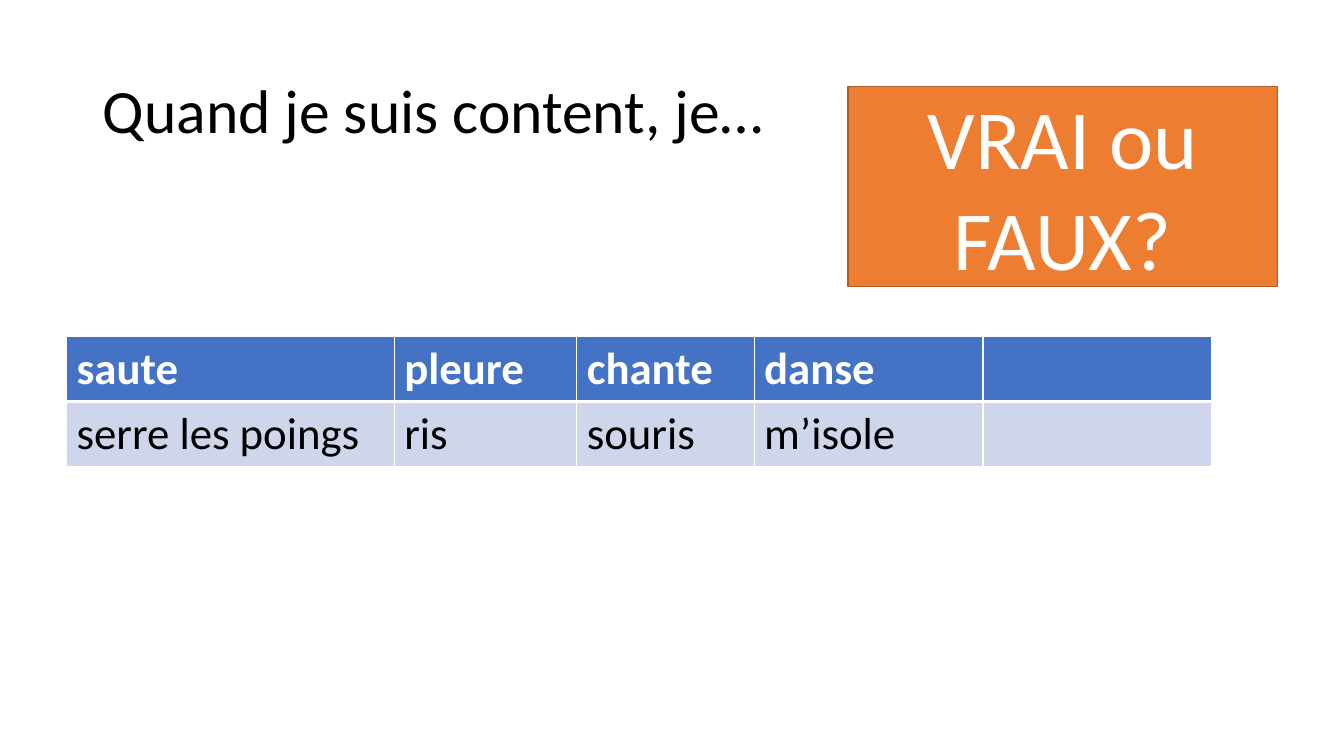
from lxml.etree import SubElement
from pptx import Presentation
from pptx.dml.color import RGBColor
from pptx.enum.shapes import MSO_SHAPE
from pptx.enum.text import MSO_ANCHOR, PP_ALIGN
from pptx.oxml import parse_xml
from pptx.oxml.ns import nsdecls, qn
from pptx.util import Inches, Pt

WHITE = RGBColor(0xFF, 0xFF, 0xFF)
BLACK = RGBColor(0x00, 0x00, 0x00)
BLUE = RGBColor(0x44, 0x72, 0xC4)
PALE = RGBColor(0xCF, 0xD5, 0xEA)
ORANGE = RGBColor(0xED, 0x7D, 0x31)
BROWN = RGBColor(0xAF, 0x5C, 0x24)

WIDTHS = [3.25, 1.81, 1.76, 2.27, 2.27]
VERBS = [
    ["saute", "pleure", "chante", "danse", ""],
    ["serre les poings", "ris", "souris", "m’isole", ""],
]


def write(frame, text, size, color, align=PP_ALIGN.LEFT, bold=False):
    frame.text = text
    para = frame.paragraphs[0]
    para.alignment = align
    for run in para.runs:
        font = run.font
        font.name, font.size, font.bold = "Calibri", Pt(size), bold
        font.color.rgb = color


def place(shape, box):
    shape.left, shape.top, shape.width, shape.height = map(Inches, box)


def edge(cell, sides):
    """Draw white cell borders; sides maps a tag to a width in points."""
    props = cell._tc.get_or_add_tcPr()
    for spot, (tag, width) in enumerate(sides.items()):
        line = parse_xml(f'<a:{tag} {nsdecls("a")} w="{Pt(width)}"/>')
        fill = SubElement(line, qn("a:solidFill"))
        SubElement(fill, qn("a:srgbClr"), val=str(WHITE))
        props.insert(spot, line)


# Sentence to complete
def add_title(slide, box):
    title = slide.shapes.title
    place(title, box)
    frame = title.text_frame
    frame.vertical_anchor = MSO_ANCHOR.MIDDLE
    write(frame, "Quand je suis content, je…", 44, BLACK)
    frame.paragraphs[0].line_spacing = 0.9


# Verb choices
def add_verbs(slide, box):
    shape = slide.shapes.add_table(len(VERBS), len(WIDTHS), *map(Inches, box))
    table = shape.table
    for column, width in zip(table.columns, WIDTHS):
        column.width = Inches(width)
    for r, words in enumerate(VERBS):
        head = r == 0
        for c, word in enumerate(words):
            cell = table.cell(r, c)
            cell.fill.solid()
            cell.fill.fore_color.rgb = BLUE if head else PALE
            write(cell.text_frame, word, 32, WHITE if head else BLACK, bold=head)
            edge(cell, {"lnL": 1, "lnR": 1, "lnT": 1 if head else 3,
                        "lnB": 3 if head else 1})


# Question box
def add_quiz(slide, box):
    quiz = slide.shapes.add_shape(MSO_SHAPE.RECTANGLE, *map(Inches, box))
    quiz.shadow.inherit = False
    quiz.fill.solid()
    quiz.fill.fore_color.rgb = ORANGE
    quiz.line.color.rgb = BROWN
    quiz.line.width = Pt(1)
    frame = quiz.text_frame
    frame.word_wrap = True
    frame.vertical_anchor = MSO_ANCHOR.MIDDLE
    write(frame, "VRAI ou FAUX?", 60, WHITE, PP_ALIGN.CENTER)


def main():
    deck = Presentation()
    deck.slide_width, deck.slide_height = Inches(13.33), Inches(7.5)
    slide = deck.slides.add_slide(deck.slide_layouts[5])
    add_title(slide, (0.92, 0.4, 11.5, 1.45))
    add_verbs(slide, (0.66, 3.34, 11.36, 1.28))
    add_quiz(slide, (8.41, 0.86, 4.26, 1.98))
    deck.save("out.pptx")


if __name__ == "__main__":
    main()
